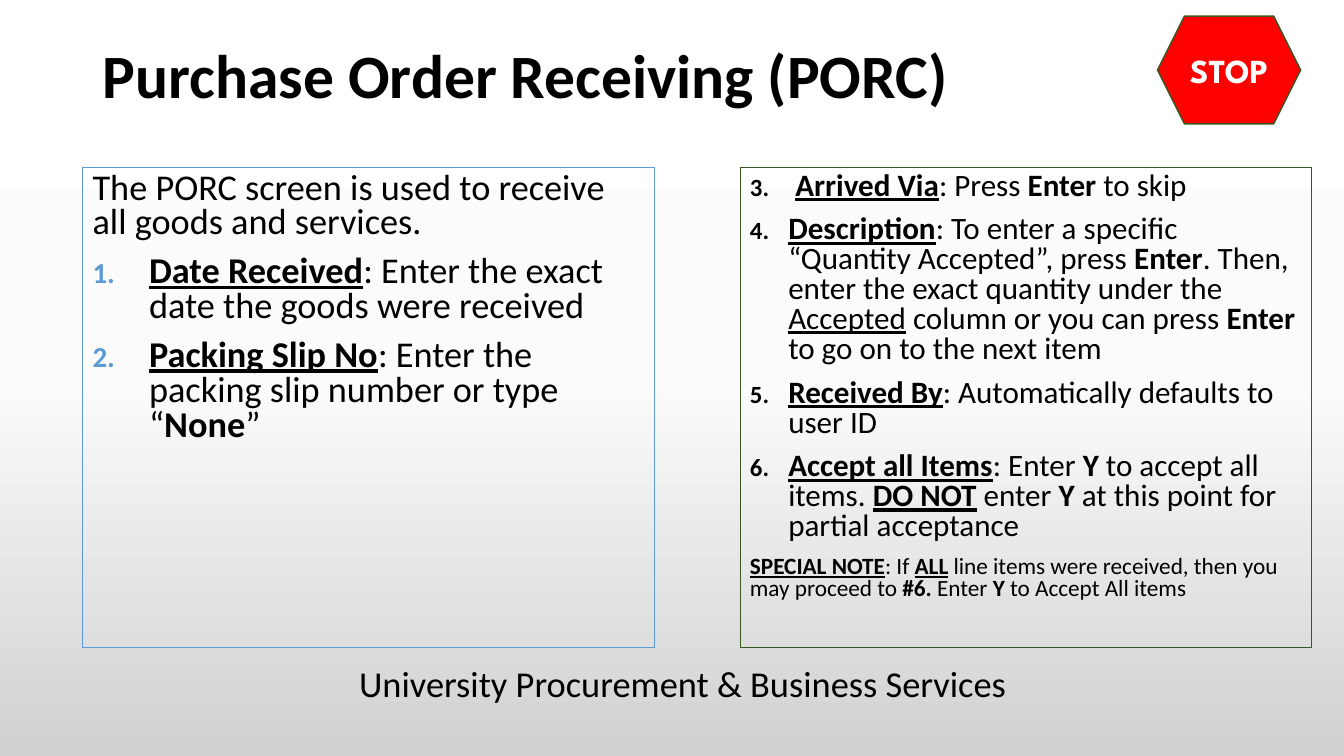
from lxml import etree
from pptx import Presentation
from pptx.dml.color import RGBColor
from pptx.enum.shapes import MSO_SHAPE
from pptx.enum.text import MSO_ANCHOR, MSO_AUTO_SIZE, PP_ALIGN
from pptx.oxml.ns import qn
from pptx.util import Inches, Pt

RECTANGLE, HEXAGON = MSO_SHAPE.RECTANGLE, MSO_SHAPE.HEXAGON
TOP, MIDDLE = MSO_ANCHOR.TOP, MSO_ANCHOR.MIDDLE
LEFT, CENTER = PP_ALIGN.LEFT, PP_ALIGN.CENTER
FIXED_SIZE = MSO_AUTO_SIZE.NONE

SLIDE_WIDTH, SLIDE_HEIGHT = 13.33, 7.5
BODY_FONT, SIGN_FONT = "Calibri", "League Spartan"
BLACK, WHITE, RED, BLUE, GREEN = "000000", "FFFFFF", "FF0000", "5B9BD5", "385723"
BACKGROUND_STOPS = [(0, WHITE), (50, "FBFBFB"), (100, "D1D1D1")]

TITLE = "Purchase Order Receiving (PORC)"
FOOTER = "University Procurement & Business Services"
SIGN = "STOP"

# A run is (text, style): b for bold, u for underlined.
# A paragraph is (item number or None, size, runs).
COLUMNS = [
    {"line": BLUE, "bullet": BLUE, "indent": 0.56, "paragraphs": [
        (None, 25.9, [("The PORC screen is used to receive all goods and services.", "")]),
        (1, 25.9, [("Date Received", "bu"),
                   (": Enter the exact date the goods were received", "")]),
        (2, 25.9, [("Packing Slip No", "bu"),
                   (": Enter the packing slip number or type “", ""),
                   ("None", "b"), ("”", "")]),
    ]},
    {"line": GREEN, "bullet": BLACK, "indent": 0.38, "paragraphs": [
        (3, 22.2, [(" ", "b"), ("Arrived Via", "bu"), (": Press ", ""),
                   ("Enter", "b"), (" to skip", "")]),
        (4, 22.2, [("Description", "bu"),
                   (": To enter a specific “Quantity Accepted”, press ", ""),
                   ("Enter", "b"),
                   (". Then, enter the exact quantity under the ", ""),
                   ("Accepted", "u"), (" column or you can press ", ""),
                   ("Enter", "b"), (" to go on to the next item", "")]),
        (5, 22.2, [("Received By", "bu"),
                   (": Automatically defaults to user ID", "")]),
        (6, 22.2, [("Accept all Items", "bu"), (": Enter ", ""), ("Y", "b"),
                   (" to accept all items. ", ""), ("DO NOT", "bu"),
                   (" enter ", ""), ("Y", "b"),
                   (" at this point for partial acceptance", "")]),
        (None, 16.6, [("SPECIAL NOTE", "bu"), (": If ", ""), ("ALL", "bu"),
                      (" line items were received, then you may proceed to ", ""),
                      ("#6. ", "b"), ("Enter ", ""), ("Y ", "b"),
                      ("to Accept All items", "")]),
    ]},
]

# Boxes are left, top, width, height in inches.
TITLE_BOX = (0.92, 0.4, 11.5, 1.45)
FOOTER_BOX = (3.44, 6.51, 6.67, 0.54)
SIGN_BOX = (11.48, 0.16, 1.42, 1.07)
COLUMN_LEFT, COLUMN_TOP, COLUMN_WIDTH, COLUMN_HEIGHT = 0.82, 1.66, 5.67, 4.76
COLUMN_GAP = 0.85


def color(value):
    return RGBColor.from_string(value)


def inches(box):
    return [Inches(length) for length in box]


def format_run(run, size, font=BODY_FONT, fill=BLACK, style=""):
    run.font.name, run.font.size = font, Pt(size)
    run.font.color.rgb = color(fill)
    run.font.bold = "b" in style
    run.font.underline = "u" in style


def write_line(text_frame, text, alignment, anchor, **run_format):
    """Fill a text frame with one evenly formatted paragraph."""
    text_frame.text = text
    text_frame.word_wrap = True
    text_frame.auto_size = FIXED_SIZE
    text_frame.vertical_anchor = anchor
    paragraph = text_frame.paragraphs[0]
    paragraph.alignment = alignment
    format_run(paragraph.runs[0], **run_format)
    return paragraph


def add_outlined_shape(slide, kind, box, line, width):
    shape = slide.shapes.add_shape(kind, *inches(box))
    shape.shadow.inherit = False
    shape.fill.background()
    shape.line.color.rgb = color(line)
    shape.line.width = Pt(width)
    return shape


def add_number(paragraph, start, bullet_color, indent):
    """Give a paragraph a hanging automatic number."""
    properties = paragraph._p.get_or_add_pPr()
    properties.set("marL", str(Inches(indent)))
    properties.set("indent", str(-Inches(indent)))
    holder = etree.SubElement(properties, qn("a:buClr"))
    etree.SubElement(holder, qn("a:srgbClr"), val=bullet_color)
    etree.SubElement(holder.getparent(), qn("a:buSzPct"), val="80000")
    etree.SubElement(properties, qn("a:buFont"), typeface=BODY_FONT)
    etree.SubElement(properties, qn("a:buAutoNum"), type="arabicPeriod", startAt=str(start))


def add_column(slide, index, column):
    left = COLUMN_LEFT + index * (COLUMN_WIDTH + COLUMN_GAP)
    box = (left, COLUMN_TOP, COLUMN_WIDTH, COLUMN_HEIGHT)
    text_frame = add_outlined_shape(slide, RECTANGLE, box, column["line"], 0.75).text_frame
    text_frame.word_wrap = True
    text_frame.vertical_anchor = TOP
    first_number = next(number for number, _, _ in column["paragraphs"] if number)
    for position, (number, size, runs) in enumerate(column["paragraphs"]):
        paragraph = text_frame.add_paragraph() if position else text_frame.paragraphs[0]
        paragraph.alignment = LEFT
        paragraph.line_spacing = 0.8
        paragraph.space_before = Pt(10 if position else 0)
        if number:
            add_number(paragraph, first_number, column["bullet"], column["indent"])
        for text, style in runs:
            run = paragraph.add_run()
            run.text = text
            format_run(run, size, style=style)


def paint_background(slide):
    fill = slide.background.fill
    fill.gradient()
    fill.gradient_angle = 270
    stops = slide.background._cSld.find(".//" + qn("a:gsLst"))
    for stop in list(stops):
        stops.remove(stop)
    for percent, value in BACKGROUND_STOPS:
        stop = etree.SubElement(stops, qn("a:gs"), pos=str(percent * 1000))
        etree.SubElement(stop, qn("a:srgbClr"), val=value)


def main():
    presentation = Presentation()
    presentation.slide_width = Inches(SLIDE_WIDTH)
    presentation.slide_height = Inches(SLIDE_HEIGHT)
    slide = presentation.slides.add_slide(presentation.slide_layouts[5])
    paint_background(slide)

    title = slide.shapes.title
    title.left, title.top, title.width, title.height = inches(TITLE_BOX)
    heading = write_line(title.text_frame, TITLE, LEFT, TOP, size=44, style="b")
    heading.line_spacing = 0.9

    footer = slide.shapes.add_textbox(*inches(FOOTER_BOX))
    write_line(footer.text_frame, FOOTER, CENTER, TOP, size=26)

    for index, column in enumerate(COLUMNS):
        add_column(slide, index, column)

    sign = add_outlined_shape(slide, HEXAGON, SIGN_BOX, GREEN, 1)
    sign.fill.solid()
    sign.fill.fore_color.rgb = color(RED)
    write_line(sign.text_frame, SIGN, CENTER, MIDDLE,
               size=24, font=SIGN_FONT, fill=WHITE, style="b")

    presentation.save("out.pptx")


if __name__ == "__main__":
    main()
